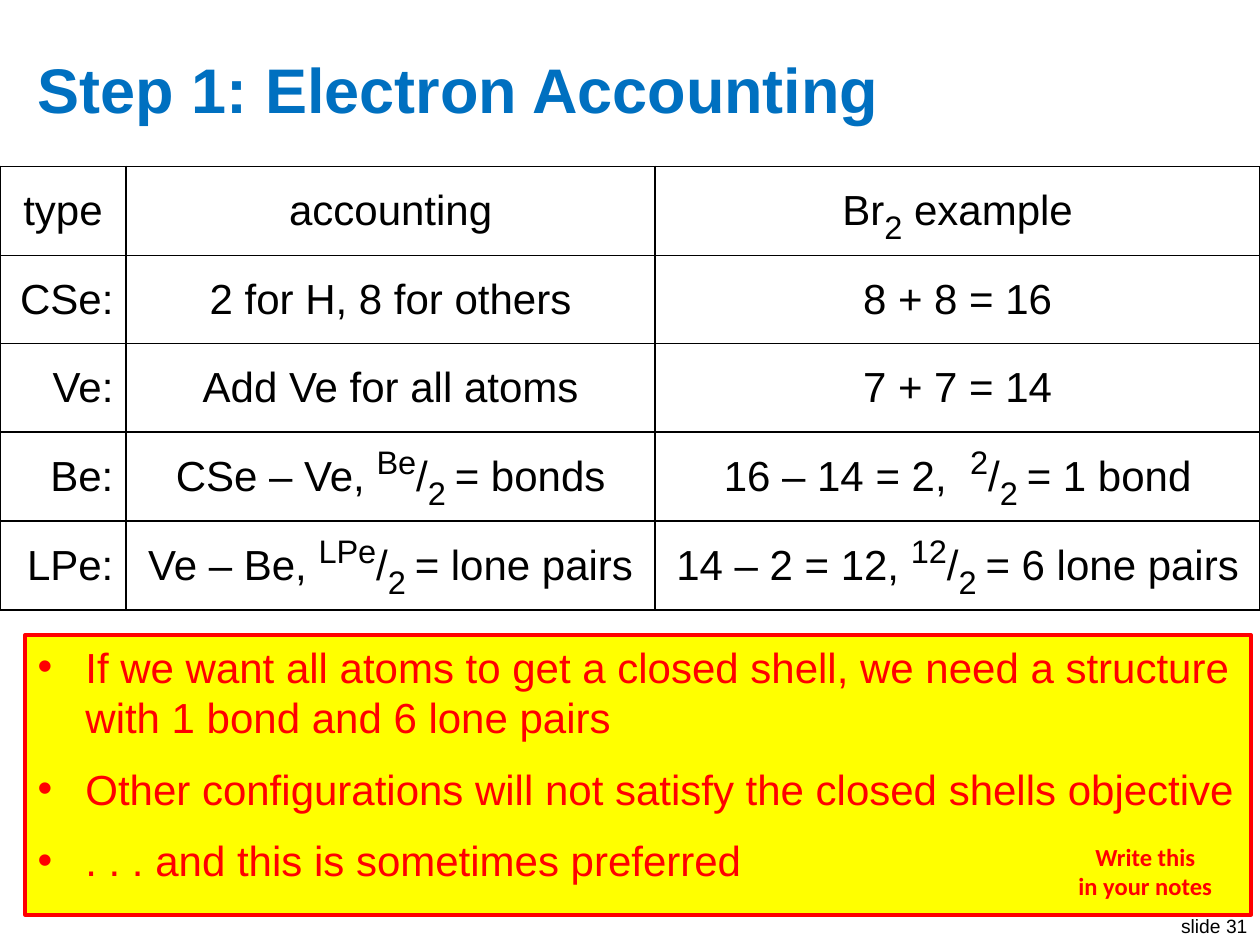
from typing import NamedTuple

from lxml.etree import SubElement
from pptx import Presentation
from pptx.dml.color import RGBColor
from pptx.enum.shapes import MSO_SHAPE
from pptx.enum.text import MSO_ANCHOR, PP_ALIGN
from pptx.oxml.ns import qn
from pptx.util import Inches, Pt

COLORS = {
    "title": "0070C0",
    "text": "000000",
    "paper": "FFFFFF",
    "note": "FFFF00",
    "accent": "FF0000",
}
SUPERSCRIPT, SUBSCRIPT = 30000, -25000


class Piece(NamedTuple):
    text: str
    baseline: int = 0


class Box(NamedTuple):
    left: float
    top: float
    width: float
    height: float

    def lengths(self) -> list:
        return [Inches(value) for value in self]


def color(name: str) -> RGBColor:
    return RGBColor.from_string(COLORS[name])


def style(paragraph, size: float, color_name: str, font: str = "Arial",
          bold: bool = False, align=PP_ALIGN.LEFT) -> None:
    paragraph.alignment = align
    paragraph.font.name = font
    paragraph.font.size = Pt(size)
    paragraph.font.bold = bold
    paragraph.font.color.rgb = color(color_name)


def halved(before: str, numerator: str, after: str) -> list[Piece]:
    return [Piece(before), Piece(numerator, SUPERSCRIPT), Piece("/"),
            Piece("2 ", SUBSCRIPT), Piece(after)]


def add_borders(cell) -> None:
    properties = cell._tc.get_or_add_tcPr()
    for position, side in enumerate(("lnL", "lnR", "lnT", "lnB")):
        line = SubElement(properties, qn(f"a:{side}"), w=str(Pt(1)))
        fill = SubElement(line, qn("a:solidFill"))
        SubElement(fill, qn("a:srgbClr"), val=COLORS["text"])
        properties.remove(line)
        properties.insert(position, line)  # borders come before the fill


def fill_cell(cell, pieces: list[Piece], align) -> None:
    cell.vertical_anchor = MSO_ANCHOR.MIDDLE
    cell.fill.solid()
    cell.fill.fore_color.rgb = color("paper")
    add_borders(cell)
    paragraph = cell.text_frame.paragraphs[0]
    style(paragraph, 24, "text", align=align)
    for piece in pieces:
        run = paragraph.add_run()
        run.text = piece.text
        run.font.name = "Arial"
        run.font.color.rgb = color("text")
        run.font.size = Pt(32 if piece.baseline else 24)
        if piece.baseline:
            run.font._element.set("baseline", str(piece.baseline))


def add_note(slide, box: Box, lines: list[str], outlined: bool):
    shape = slide.shapes.add_shape(MSO_SHAPE.RECTANGLE, *box.lengths())
    shape.shadow.inherit = False
    shape.fill.solid()
    shape.fill.fore_color.rgb = color("note")
    if outlined:
        shape.line.color.rgb = color("accent")
        shape.line.width = Pt(2.25)
    else:
        shape.line.fill.background()
    frame = shape.text_frame
    frame.word_wrap = True
    frame.vertical_anchor = MSO_ANCHOR.TOP
    frame.text = "\n".join(lines)
    return frame.paragraphs


def add_bullet(paragraph) -> None:
    paragraph.space_before = Pt(12)
    properties = paragraph._p.get_or_add_pPr()
    properties.set("marL", str(Inches(0.38)))
    properties.set("indent", str(Inches(-0.38)))
    bullet_font = SubElement(properties, qn("a:buFont"), typeface="Arial")
    bullet = SubElement(properties, qn("a:buChar"), char="•")
    default_run = properties.find(qn("a:defRPr"))
    if default_run is not None:
        default_run.addprevious(bullet_font)
        default_run.addprevious(bullet)


presentation = Presentation()
presentation.slide_width, presentation.slide_height = Inches(10), Inches(7.5)
slide = presentation.slides.add_slide(presentation.slide_layouts[5])

# Title
title = slide.shapes.title
title.left, title.top, title.width, title.height = Box(0.2, 0.3, 9.6, 0.8).lengths()
title.text_frame.text = "Step 1: Electron Accounting"
title.text_frame.vertical_anchor = MSO_ANCHOR.MIDDLE
style(title.text_frame.paragraphs[0], 36, "title", bold=True)

# Slide number
number = slide.shapes.add_textbox(*Box(9.25, 7.21, 0.75, 0.29).lengths())
number.text_frame.word_wrap = False
number.text_frame.text = "slide 31"
style(number.text_frame.paragraphs[0], 11, "text", align=PP_ALIGN.RIGHT)

# Closed-shell conclusions
conclusions = [
    "If we want all atoms to get a closed shell, we need a structure with 1 bond and 6 lone pairs",
    "Other configurations will not satisfy the closed shells objective",
    ". . . and this is sometimes preferred",
]
for paragraph in add_note(slide, Box(0.2, 5.04, 9.73, 2.22), conclusions, True):
    style(paragraph, 24, "accent")
    add_bullet(paragraph)

# Electron accounting table
rows = [
    ([Piece("type")], [Piece("accounting")],
     [Piece("Br"), Piece("2", SUBSCRIPT), Piece(" example")]),
    ([Piece("CSe:")], [Piece("2 for H, 8 for others")], [Piece("8 + 8 = 16")]),
    ([Piece("Ve:")], [Piece("Add Ve for all atoms")], [Piece("7 + 7 = 14")]),
    ([Piece("Be:")], halved("CSe – Ve, ", "Be", "= bonds"),
     halved("16 – 14 = 2,  ", "2", "= 1 bond")),
    ([Piece("LPe:")], halved("Ve – Be, ", "LPe", "= lone pairs"),
     halved("14 – 2 = 12, ", "12", "= 6 lone pairs")),
]
column_widths = (1, 4.2, 4.8)
table = slide.shapes.add_table(len(rows), len(column_widths),
                               *Box(0, 1.32, 10, 3.5).lengths()).table
for column, width in zip(table.columns, column_widths):
    column.width = Inches(width)
for row_index, row in enumerate(rows):
    table.rows[row_index].height = Inches(0.7)
    for column_index, pieces in enumerate(row):
        is_label = row_index > 0 and column_index == 0
        fill_cell(table.cell(row_index, column_index), pieces,
                  PP_ALIGN.RIGHT if is_label else PP_ALIGN.CENTER)

# Reminder to take notes
reminder = ["Write this", "in your notes"]
for paragraph in add_note(slide, Box(8.41, 6.63, 1.36, 0.57), reminder, False):
    style(paragraph, 14, "accent", "Calibri", True, PP_ALIGN.CENTER)

presentation.save("out.pptx")
